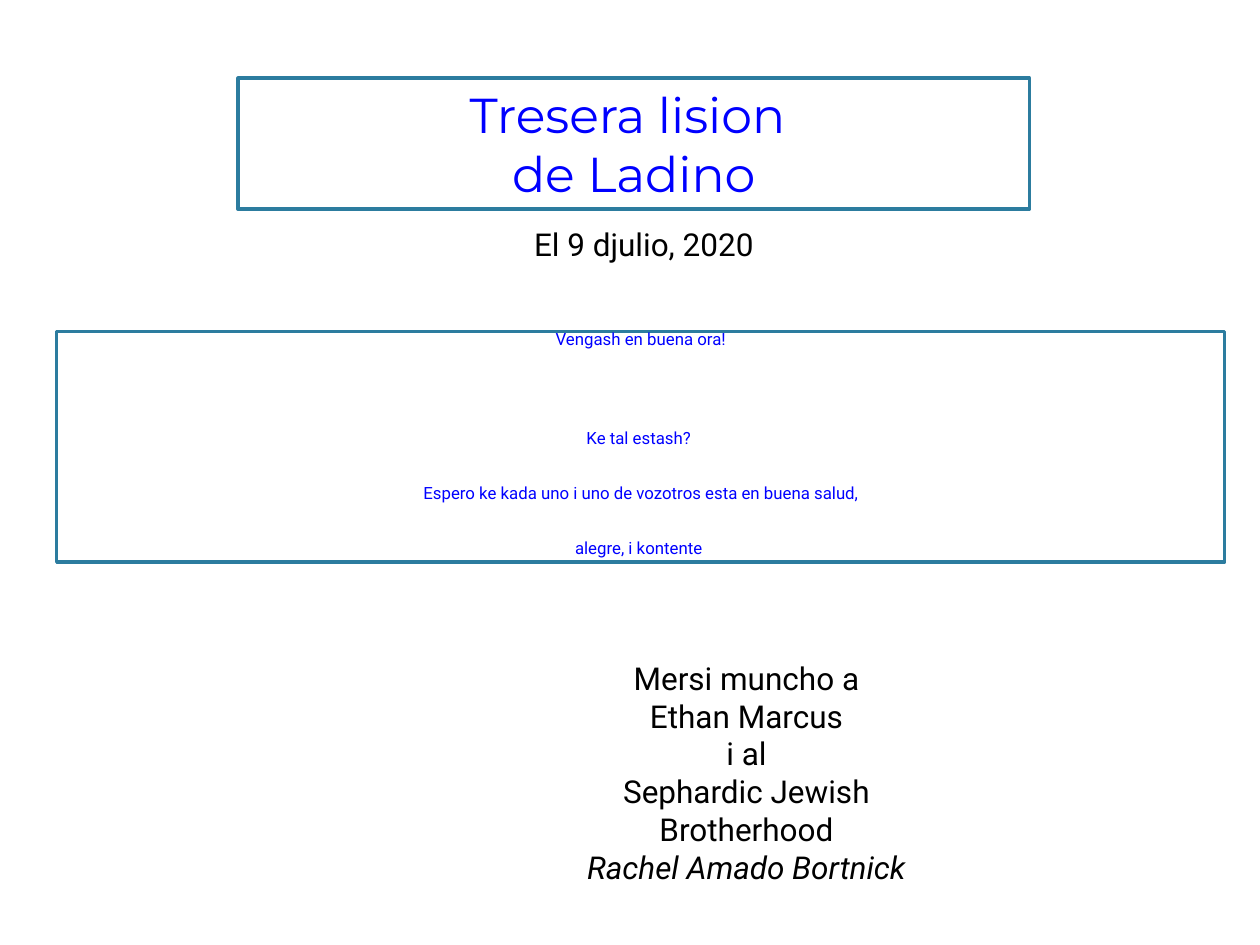
from pptx import Presentation
from pptx import util as u
from pptx.dml.color import RGBColor
from pptx.enum import text
from pptx.oxml import ns, xmlchemy

COLORS = {"box": "FFFFFF", "border": "2C7C9F", "accent": "0000FF", "ink": "000000"}


def place(sp, left, top, width, height, anchor, framed=False):
    sp.left, sp.top = u.Inches(left), u.Inches(top)
    sp.width, sp.height = u.Inches(width), u.Inches(height)
    tf = sp.text_frame
    tf.word_wrap = True
    tf.auto_size = text.MSO_AUTO_SIZE.NONE
    tf.vertical_anchor = anchor
    if framed:
        sp.fill.solid()
        sp.fill.fore_color.rgb = RGBColor.from_string(COLORS["box"])
        sp.line.color.rgb = RGBColor.from_string(COLORS["border"])
        sp.line.width = u.Pt(2)
    return tf


def write(tf, lines, size, font, color, align=text.PP_ALIGN.CENTER):
    for i, line in enumerate(lines):
        p = tf.paragraphs[0] if i == 0 else tf.add_paragraph()
        p.alignment = align
        r = p.add_run()
        r.text = line
        r.font.size = u.Pt(size)
        r.font.name = font
        r.font.color.rgb = RGBColor.from_string(COLORS[color])


prs = Presentation()
prs.slide_width, prs.slide_height = u.Inches(10), u.Inches(7.5)
s = prs.slides.add_slide(prs.slide_layouts[1])
TOP, MIDDLE = text.MSO_ANCHOR.TOP, text.MSO_ANCHOR.MIDDLE

tf = place(s.shapes.title, 1.89, 0.62, 6.28, 1.04, MIDDLE, framed=True)
write(tf, ["Tresera lision ", "de Ladino"], 28, "Montserrat", "accent")

sp = s.shapes.add_textbox(0, 0, 0, 0)
tf = place(sp, 4.14, 1.74, 1.97, 0.4, TOP)
write(tf, ["El 9 djulio, 2020"], 18, "Roboto", "ink", text.PP_ALIGN.LEFT)

tf = place(s.placeholders[1], 0.45, 2.63, 9.27, 1.83, TOP, framed=True)
greeting = [
    "Vengash en buena ora!",
    "Ke tal estash? ",
    "Espero ke kada uno i uno de vozotros esta en buena salud,",
    "alegre, i kontente ",
]
write(tf, greeting, 9.6, "Roboto", "accent")
for p, gap in zip(tf.paragraphs, [20, 45.5, 20, 20]):
    p.space_before = u.Pt(gap)
    pPr = p._p.get_or_add_pPr()
    pPr.set("marL", "0")
    pPr.set("indent", "0")
    pPr.append(xmlchemy.OxmlElement("a:buNone"))
tf.paragraphs[0].line_spacing = 0.5

sp = s.shapes.add_textbox(0, 0, 0, 0)
tf = place(sp, 4.26, 5.18, 3.33, 1.92, TOP)
thanks = [
    "Mersi muncho a",
    "Ethan Marcus",
    " i al ",
    "Sephardic Jewish Brotherhood",
    "Rachel Amado Bortnick",
]
write(tf, thanks, 18, "Roboto", "ink")
tf.paragraphs[-1].runs[0].font.italic = True

prs.save("out.pptx")
